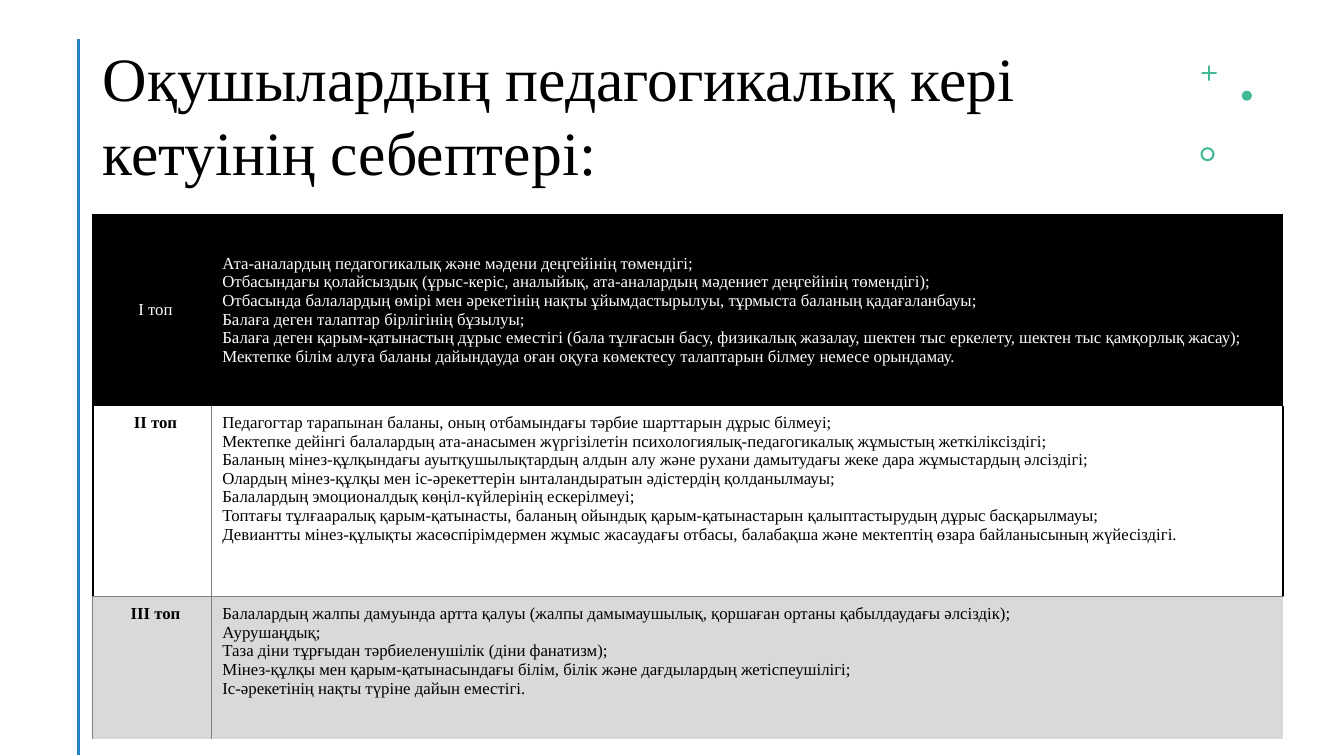
from lxml import etree
from pptx import Presentation
from pptx.dml.color import RGBColor
from pptx.enum import shapes, text
from pptx.oxml.ns import qn
from pptx.util import Pt

# Content
TITLE = "Оқушылардың педагогикалық кері кетуінің себептері:"
GROUPS = [
    ("І топ", [
        "Ата-аналардың педагогикалық және мәдени деңгейінің төмендігі;",
        "Отбасындағы қолайсыздық (ұрыс-керіс, аналыйық, ата-аналардың мәдениет деңгейінің төмендігі);",
        "Отбасында балалардың өмірі мен әрекетінің нақты ұйымдастырылуы, тұрмыста баланың қадағаланбауы;",
        "Балаға деген талаптар бірлігінің бұзылуы;",
        "Балаға деген қарым-қатынастың дұрыс еместігі (бала тұлғасын басу, физикалық жазалау, "
        "шектен тыс еркелету, шектен тыс қамқорлық жасау);",
        "Мектепке білім алуға баланы дайындауда оған оқуға көмектесу талаптарын білмеу немесе орындамау.",
    ]),
    ("ІІ топ", [
        "Педагогтар тарапынан баланы, оның отбамындағы тәрбие шарттарын дұрыс білмеуі;",
        "Мектепке дейінгі балалардың ата-анасымен жүргізілетін психологиялық-педагогикалық жұмыстың жеткіліксіздігі;",
        "Баланың мінез-құлқындағы ауытқушылықтардың алдын алу және рухани дамытудағы жеке дара жұмыстардың әлсіздігі;",
        "Олардың мінез-құлқы мен іс-әрекеттерін ынталандыратын әдістердің қолданылмауы;",
        "Балалардың эмоционалдық көңіл-күйлерінің ескерілмеуі;",
        "Топтағы тұлғааралық қарым-қатынасты, баланың ойындық қарым-қатынастарын қалыптастырудың дұрыс басқарылмауы;",
        "Девиантты мінез-құлықты жасөспірімдермен жұмыс жасаудағы отбасы, балабақша және мектептің "
        "өзара байланысының жүйесіздігі.",
    ]),
    ("ІІІ топ", [
        "Балалардың жалпы дамуында артта қалуы (жалпы дамымаушылық, қоршаған ортаны қабылдаудағы әлсіздік);",
        "Аурушаңдық;",
        "Таза діни тұрғыдан тәрбиеленушілік (діни фанатизм);",
        "Мінез-құлқы мен қарым-қатынасындағы білім, білік және дағдылардың жетіспеушілігі;",
        "Іс-әрекетінің нақты түріне дайын еместігі.",
    ]),
]

THEME = {
    "font": "Times New Roman", "title_size": 44, "body_size": 12,
    "black": "000000", "white": "FFFFFF", "shade": "D9D9D9", "rule": "808080",
    "accent": "42BA97", "bar": "2683C6",
}

# Layout, in points
TITLE_BOX = (66.24, 28.8, 771.84, 104.4)
BAR_X, BAR_TOP, BAR_BOTTOM = 56.16, 28.08, 539.28
TABLE_LEFT, TABLE_TOP = 66.24, 153.2
COLUMN_WIDTHS = (85, 765.3)
ROW_HEIGHTS = (136.5, 136.5, 102)
ORNAMENTS = [  # preset, left, top, size, adjustment
    (shapes.MSO_SHAPE.CROSS, 858.24, 46.8, 10.8, 0.44),
    (shapes.MSO_SHAPE.OVAL, 887.04, 64.8, 7.2, None),
    (shapes.MSO_SHAPE.DONUT, 857.52, 105.12, 10.08, 0.15),
]

# Table looks: row fill, row text colour, then borders of each cell
OUTER, INNER = (THEME["black"], 1.5), (THEME["rule"], 0.5)
ROW_LOOKS = [
    ("black", "white", [{"L": OUTER, "T": OUTER}, {"T": OUTER}]),
    (None, "black", [{"L": OUTER, "R": INNER, "B": INNER}, {"L": INNER, "R": OUTER, "B": INNER}]),
    ("shade", "black", [{"L": INNER, "T": INNER, "R": INNER}, {"L": INNER, "T": INNER}]),
]


def color(name):
    return RGBColor.from_string(THEME[name])


def style(paragraph, size, color_name, bold=False):
    font = paragraph.font
    font.name, font.size, font.bold = THEME["font"], Pt(THEME[size]), bold
    font.color.rgb = color(color_name)


def set_borders(cell, borders):
    properties = cell._tc.get_or_add_tcPr()
    for index, side in enumerate("LRTB"):
        line = etree.Element(qn(f"a:ln{side}"))
        if side in borders:
            rgb, width = borders[side]
            line.set("w", str(Pt(width)))
            fill = etree.SubElement(line, qn("a:solidFill"))
            etree.SubElement(fill, qn("a:srgbClr")).set("val", rgb)
        else:
            etree.SubElement(line, qn("a:noFill"))
        properties.insert(index, line)


def fill_cell(cell, lines, alignment, anchor, fill_name, color_name, bold):
    cell.margin_left, cell.margin_right = Pt(7.6), Pt(3)
    cell.margin_top = cell.margin_bottom = Pt(5.6)
    cell.vertical_anchor = anchor
    if fill_name:
        cell.fill.solid()
        cell.fill.fore_color.rgb = color(fill_name)
    else:
        cell.fill.background()
    cell.text = "\n".join(lines)
    for paragraph in cell.text_frame.paragraphs:
        paragraph.alignment = alignment
        style(paragraph, "body_size", color_name, bold)


def add_title(slide):
    frame = slide.shapes.add_textbox(*map(Pt, TITLE_BOX)).text_frame
    frame.word_wrap = True
    frame.vertical_anchor = text.MSO_ANCHOR.MIDDLE
    paragraph = frame.paragraphs[0]
    paragraph.text = TITLE
    paragraph.line_spacing = 1.0
    style(paragraph, "title_size", "black")


def add_decoration(slide):
    # Vertical bar
    bar = slide.shapes.add_connector(
        shapes.MSO_CONNECTOR.STRAIGHT, Pt(BAR_X), Pt(BAR_TOP), Pt(BAR_X), Pt(BAR_BOTTOM))
    bar.line.color.rgb = color("bar")
    bar.line.width = Pt(2)
    etree.SubElement(bar._element.spPr, qn("a:effectLst"))

    # Plus, dot and ring
    for preset, left, top, size, adjustment in ORNAMENTS:
        shape = slide.shapes.add_shape(preset, Pt(left), Pt(top), Pt(size), Pt(size))
        shape.shadow.inherit = False
        shape.fill.solid()
        shape.fill.fore_color.rgb = color("accent")
        shape.line.fill.background()
        if adjustment:
            shape.adjustments[0] = adjustment


def add_groups_table(slide):
    table = slide.shapes.add_table(
        len(GROUPS), len(COLUMN_WIDTHS), Pt(TABLE_LEFT), Pt(TABLE_TOP),
        Pt(sum(COLUMN_WIDTHS)), Pt(sum(ROW_HEIGHTS))).table
    table.first_row = table.horz_banding = False
    for column, width in zip(table.columns, COLUMN_WIDTHS):
        column.width = Pt(width)
    for index, ((name, reasons), look) in enumerate(zip(GROUPS, ROW_LOOKS)):
        fill_name, color_name, borders = look
        row = table.rows[index]
        row.height = Pt(ROW_HEIGHTS[index])
        anchor = text.MSO_ANCHOR.TOP if index else text.MSO_ANCHOR.MIDDLE
        fill_cell(row.cells[0], [name], text.PP_ALIGN.CENTER, anchor,
                  fill_name, color_name, index > 0)
        fill_cell(row.cells[1], reasons, text.PP_ALIGN.JUSTIFY, anchor,
                  fill_name, color_name, False)
        for cell, sides in zip(row.cells, borders):
            set_borders(cell, sides)


def main():
    presentation = Presentation()
    presentation.slide_width, presentation.slide_height = Pt(960), Pt(540)
    slide = presentation.slides.add_slide(presentation.slide_layouts[6])
    add_title(slide)
    add_decoration(slide)
    add_groups_table(slide)
    presentation.save("out.pptx")


if __name__ == "__main__":
    main()
